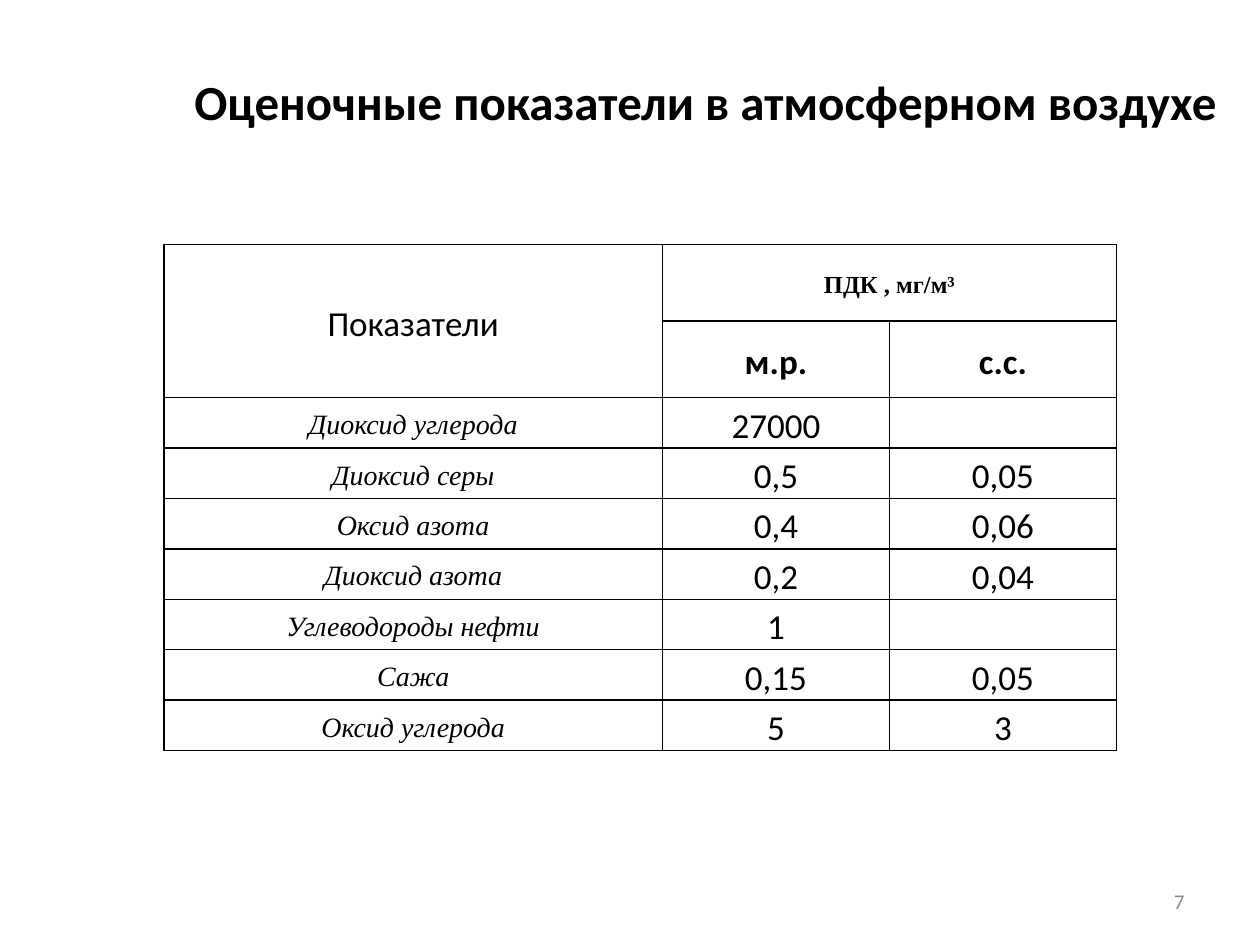
import pptx
import pptx.dml.color
import pptx.enum.text
import pptx.oxml
import pptx.oxml.ns
import pptx.util

Pt = pptx.util.Pt
RGBColor = pptx.dml.color.RGBColor
ALIGN = pptx.enum.text.PP_ALIGN
MIDDLE = pptx.enum.text.MSO_ANCHOR.MIDDLE

BLACK = RGBColor(0x00, 0x00, 0x00)
GRAY = RGBColor(0x8C, 0x8C, 0x8C)

TITLE = "Оценочные показатели в атмосферном воздухе"
PAGE_NUMBER = "7"
HEADER = [
    ("Показатели", "ПДК , мг/м³", ""),
    ("", "м.р.", "с.с."),
]
LIMITS = [
    ("Диоксид углерода", "27000", ""),
    ("Диоксид серы", "0,5", "0,05"),
    ("Оксид азота", "0,4", "0,06"),
    ("Диоксид азота", "0,2", "0,04"),
    ("Углеводороды нефти", "1", ""),
    ("Сажа", "0,15", "0,05"),
    ("Оксид углерода", "5", "3"),
]

TITLE_FORMAT = {"name": "Calibri", "size": Pt(28), "bold": True}
NUMBER_FORMAT = {"name": "Calibri", "size": Pt(12)}
PLAIN = {"name": "Calibri", "size": Pt(20), "bold": False}
UNIT = {"name": "Times New Roman", "size": Pt(14), "bold": True}
SUBHEAD = {"name": "Calibri", "size": Pt(20), "bold": True}
SUBSTANCE = {"name": "Times New Roman", "size": Pt(16), "italic": True}

HEADER_FORMATS = [(PLAIN, UNIT, UNIT), (PLAIN, SUBHEAD, SUBHEAD)]
LIMIT_FORMATS = (SUBSTANCE, PLAIN, PLAIN)

TABLE_LEFT, TABLE_TOP = 93.6, 139.7
COLUMN_WIDTHS = [285, 129.7, 129.7]
HEADER_HEIGHT, LIMIT_HEIGHT = 43.8, 28.8
CELL_MARGINS = {
    "margin_left": Pt(1.4), "margin_right": Pt(1.4),
    "margin_top": 0, "margin_bottom": 0,
}


def write(p, text, align, formats, color=BLACK):
    p.alignment = align
    r = p.add_run()
    r.text = text
    for name, value in formats.items():
        setattr(r.font, name, value)
    r.font.color.rgb = color


def add_text(s, box, text, formats, color=BLACK):
    tf = s.shapes.add_textbox(*map(Pt, box)).text_frame
    tf.word_wrap = True
    tf.vertical_anchor = MIDDLE
    write(tf.paragraphs[0], text, ALIGN.RIGHT, formats, color)


def add_borders(cell):
    tcPr = cell._tc.get_or_add_tcPr()
    for side in ("lnL", "lnR", "lnT", "lnB"):
        tcPr.append(pptx.oxml.parse_xml(
            f'<a:{side} {pptx.oxml.ns.nsdecls("a")} w="{Pt(1)}"><a:solidFill>'
            f'<a:srgbClr val="{BLACK}"/></a:solidFill></a:{side}>'))


def add_limits_table(s):
    rows = HEADER + LIMITS
    formats = HEADER_FORMATS + [LIMIT_FORMATS] * len(LIMITS)
    heights = [HEADER_HEIGHT] * len(HEADER) + [LIMIT_HEIGHT] * len(LIMITS)
    box = (TABLE_LEFT, TABLE_TOP, sum(COLUMN_WIDTHS), sum(heights))
    table = s.shapes.add_table(
        len(rows), len(COLUMN_WIDTHS), *map(Pt, box)).table
    table.first_row = table.horz_banding = False
    for column, width in zip(table.columns, COLUMN_WIDTHS):
        column.width = Pt(width)
    for i, height in enumerate(heights):
        table.rows[i].height = Pt(height)
        for j, text in enumerate(rows[i]):
            cell = table.cell(i, j)
            add_borders(cell)
            cell.fill.background()
            cell.vertical_anchor = MIDDLE
            for name, value in CELL_MARGINS.items():
                setattr(cell, name, value)
            if text:
                p = cell.text_frame.paragraphs[0]
                p.line_spacing = 1.15
                write(p, text, ALIGN.CENTER, formats[i][j])
    table.cell(0, 0).merge(table.cell(1, 0))
    table.cell(0, 1).merge(table.cell(0, 2))


def main():
    prs = pptx.Presentation()
    prs.slide_width, prs.slide_height = Pt(720), Pt(540)
    s = prs.slides.add_slide(prs.slide_layouts[6])
    add_text(s, (54, 21, 648, 73), TITLE, TITLE_FORMAT)
    add_text(s, (516, 500.5, 168, 28.8), PAGE_NUMBER, NUMBER_FORMAT, GRAY)
    add_limits_table(s)
    prs.save("out.pptx")


if __name__ == "__main__":
    main()
